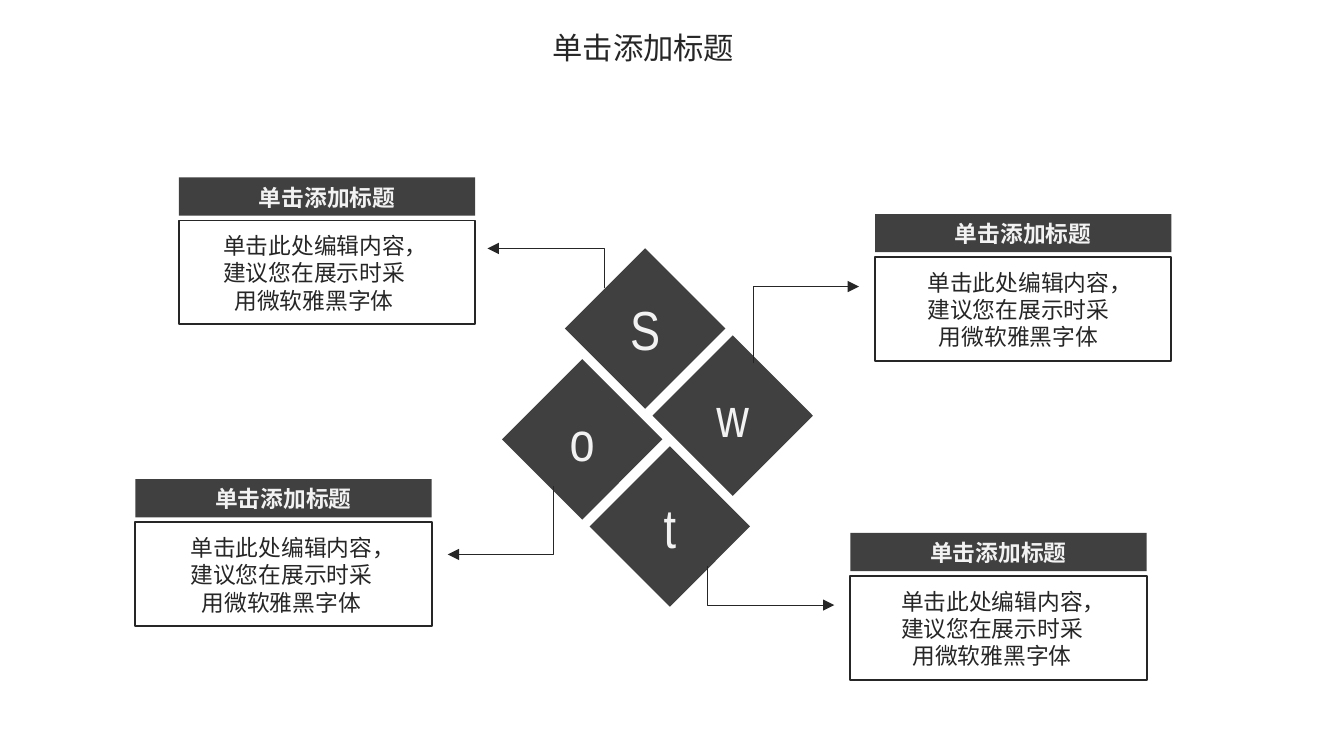
from lxml import etree
from pptx import Presentation
from pptx import util as u
from pptx.dml.color import RGBColor
from pptx.enum import shapes, text
from pptx.oxml import ns

Cm = u.Cm
DARK, INK, PALE = "404040", "262626", "F2F2F2"
SANS = "Noto Sans CJK SC"
HEAD = "单击添加标题"
BODY = "单击此处编辑内容，建议您在展示时采用微软雅黑字体"

deck = Presentation()
deck.slide_width, deck.slide_height = Cm(25), Cm(14)
slide = deck.slides.add_slide(deck.slide_layouts[6])


def block(x, y, w, h, fill=None, line=None):
    """Add a plain rectangle."""
    box = slide.shapes.add_shape(
        shapes.MSO_SHAPE.RECTANGLE, Cm(x), Cm(y), Cm(w), Cm(h))
    box.shadow.inherit = False
    for part, color in ((box.fill, fill), (box.line.fill, line)):
        if color:
            part.solid()
            part.fore_color.rgb = RGBColor.from_string(color)
        else:
            part.background()
    return box


def write(words, x, y, w, h, color, frame, **font):
    """Add a text box; frame and font hold format values."""
    box = slide.shapes.add_textbox(Cm(x), Cm(y), Cm(w), Cm(h))
    for key, val in frame.items():
        setattr(box.text_frame, key, val)
    para = box.text_frame.paragraphs[0]
    para.alignment = text.PP_ALIGN.CENTER
    run = para.add_run()
    run.text = words
    for key, val in font.items():
        setattr(run.font, key, val)
    run.font.color.rgb = RGBColor.from_string(color)
    east = etree.SubElement(run.font._element, ns.qn("a:ea"))
    east.set("typeface", SANS)
    return para


tight = dict(margin_left=0, margin_right=0, margin_top=0, margin_bottom=0,
             word_wrap=False)
roomy = dict(margin_left=0, margin_right=Cm(0.18), margin_top=Cm(0.1),
             margin_bottom=Cm(0.1), word_wrap=True,
             vertical_anchor=text.MSO_ANCHOR.MIDDLE)

# Letter, diamond centre, card corner, text indent, arrow start and end
parts = [
    ("S", (12, 6.11), (3.33, 3.3), 0.74, (11.25, 5.36), (9.07, 4.62)),
    ("w", (13.63, 7.73), (16.28, 3.98), 0.89, (14.01, 6.76), (15.98, 5.33)),
    ("o", (10.83, 8.17), (2.52, 8.91), 0.94, (10.3, 9.04), (8.33, 10.31)),
    ("t", (12.46, 9.79), (15.82, 9.91), 0.86, (13.16, 10.52), (15.52, 11.25)),
]
side, wide = 2.11, 5.51

for letter, (cx, cy), (x, y), dent, start, end in parts:
    # Diamond with its letter
    tile = block(cx - side / 2, cy - side / 2, side, side, fill=DARK)
    tile.rotation = 45
    write(letter, cx - 0.4, cy - 0.62, 0.8, 1.24, PALE, tight,
          name="Arial Narrow", size=u.Pt(29))

    # Arrow to the card: first up or down, then sideways
    arrow = slide.shapes.add_connector(
        shapes.MSO_CONNECTOR.ELBOW, *map(Cm, start + end))
    arrow.line.width = u.Pt(0.5)
    arrow.line.color.rgb = RGBColor.from_string(INK)
    props = arrow._element.spPr
    bend = etree.SubElement(props.find(".//" + ns.qn("a:avLst")), ns.qn("a:gd"))
    bend.set("name", "adj1")
    bend.set("fmla", "val 0")
    tip = etree.SubElement(props.find(ns.qn("a:ln")), ns.qn("a:tailEnd"))
    tip.set("type", "triangle")
    etree.SubElement(props, ns.qn("a:effectLst"))

    # Card: heading bar, outlined body, text
    block(x, y, wide, 0.71, fill=DARK)
    write(HEAD, x + 1.47, y + 0.11, 2.57, 0.51, PALE, tight,
          name=SANS, size=u.Pt(12), bold=True)
    frame = block(x, y + 0.8, wide, 1.93, line=INK)
    frame.line.width = u.Pt(1)
    write(BODY, x + dent, y + 1.24, 3.73, 1.07, INK, roomy,
          name="Lato", size=u.Pt(12))

# Slide title
title = write(HEAD, 10.03, 0.41, 8.26, 0.94, INK, dict(word_wrap=True),
              name=SANS, size=u.Pt(16))
title.alignment = text.PP_ALIGN.LEFT

deck.save("out.pptx")
